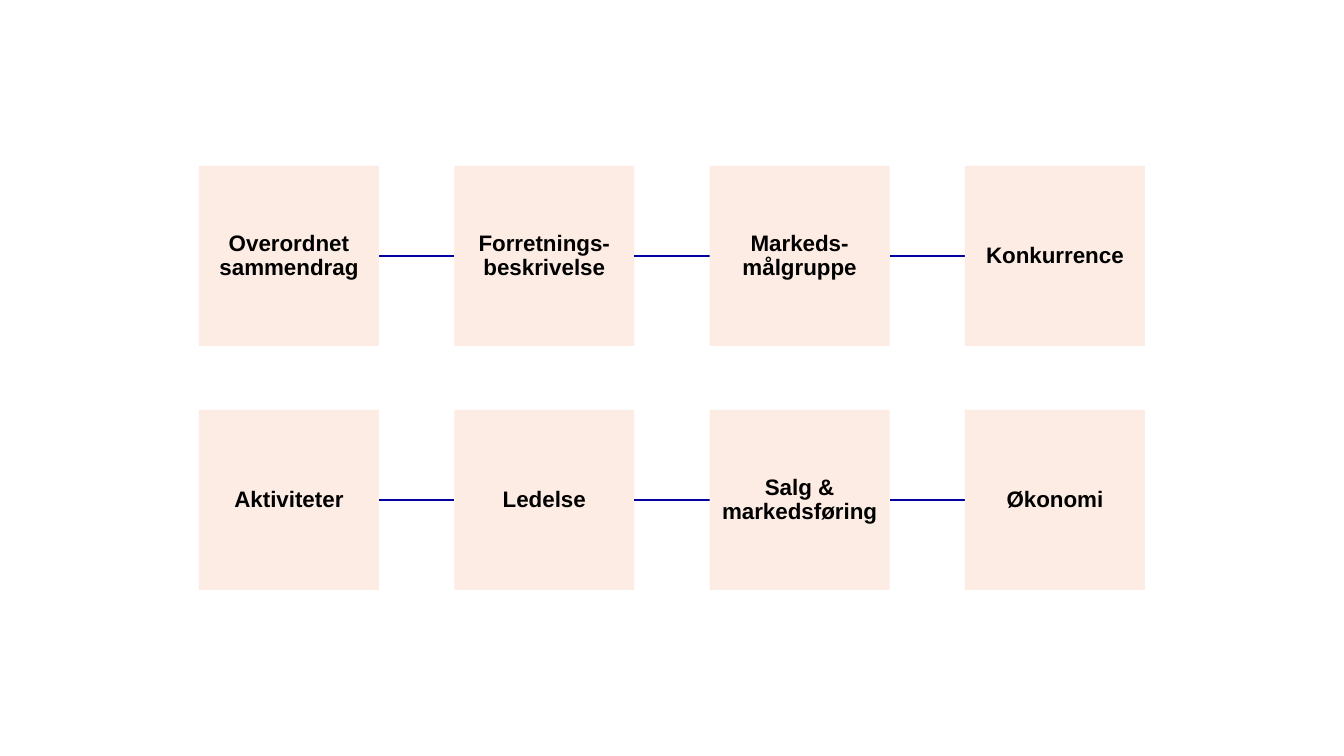
from lxml.etree import SubElement
from pptx import Presentation
from pptx.dml.color import RGBColor
from pptx.enum.shapes import MSO_CONNECTOR as CONNECTOR, MSO_SHAPE as SHAPE
from pptx.enum.text import MSO_ANCHOR as ANCHOR, PP_ALIGN as ALIGN
from pptx.oxml.ns import qn
from pptx.util import Pt

PLAN_ROWS = [
    ["Overordnet sammendrag", "Forretnings-beskrivelse", "Markeds-målgruppe", "Konkurrence"],
    ["Aktiviteter", "Ledelse", "Salg & markedsføring", "Økonomi"],
]
BOX_FILL, TEXT_COLOR, LINE_COLOR = "FDECE3", "000000", "03009F"
SLIDE_W, SLIDE_H = 1344, 756
BOX = 180
FIRST_LEFT, LAST_LEFT = 199, 965
TOPS = [166, 410]


def px(n):
    return round(n * 914400 / 100.8)


def rgb(color):
    return RGBColor.from_string(color)


def add_box(slide, left, top, text):
    sp = slide.shapes.add_shape(SHAPE.RECTANGLE, px(left), px(top), px(BOX), px(BOX))
    sp.shadow.inherit = False
    sp.fill.solid()
    sp.fill.fore_color.rgb = rgb(BOX_FILL)
    sp.line.fill.background()
    tf = sp.text_frame
    tf.word_wrap = True
    tf.vertical_anchor = ANCHOR.MIDDLE
    tf.margin_left = tf.margin_right = 0
    tf.margin_top = tf.margin_bottom = px(5)
    p = tf.paragraphs[0]
    p.alignment = ALIGN.CENTER
    p.line_spacing = 0.9
    r = p.add_run()
    r.text = text
    r.font.name = "Arial"
    r.font.size = Pt(16)
    r.font.bold = True
    r.font.color.rgb = rgb(TEXT_COLOR)


def add_link(slide, start, end, y):
    line = slide.shapes.add_connector(CONNECTOR.STRAIGHT, px(start), px(y), px(end), px(y))
    line.line.color.rgb = rgb(LINE_COLOR)
    line.line.width = Pt(1)
    SubElement(line._element.spPr, qn("a:effectLst"))


def main():
    prs = Presentation()
    prs.slide_width, prs.slide_height = px(SLIDE_W), px(SLIDE_H)
    slide = prs.slides.add_slide(prs.slide_layouts[6])
    for top, labels in zip(TOPS, PLAN_ROWS):
        pitch = (LAST_LEFT - FIRST_LEFT) / (len(labels) - 1)
        for col, label in enumerate(labels):
            left = FIRST_LEFT + col * pitch
            if col:
                add_link(slide, left, left - pitch + BOX, top + BOX / 2)
            add_box(slide, left, top, label)
    prs.save("out.pptx")


if __name__ == "__main__":
    main()
